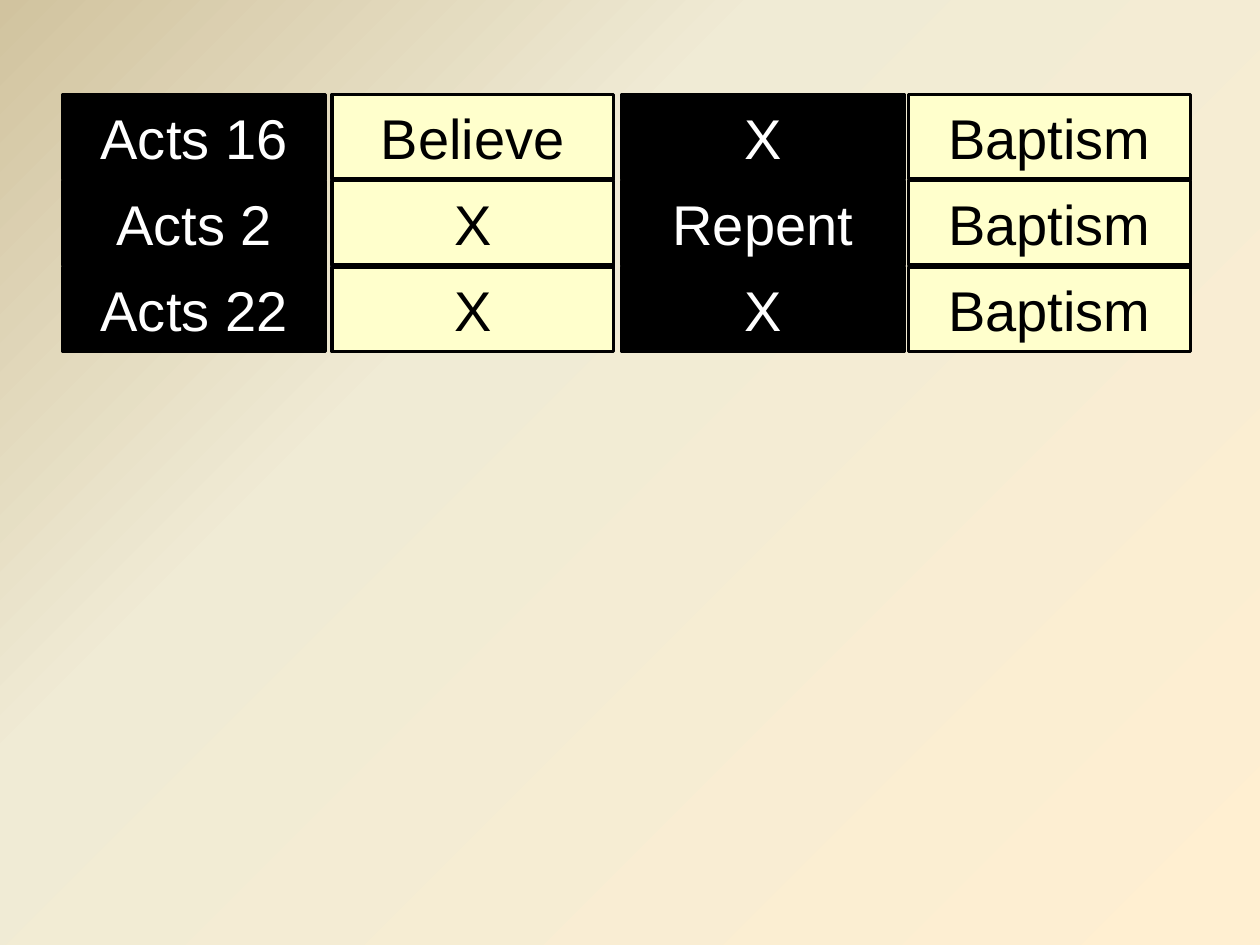
import pptx
import pptx.dml.color
import pptx.enum.shapes
import pptx.enum.text
import pptx.oxml.ns
import pptx.util
from lxml import etree

Pt = pptx.util.Pt
qn = pptx.oxml.ns.qn


def color(hex_code):
    return pptx.dml.color.RGBColor.from_string(hex_code)


class Board:
    FONT = "Arial"
    FONT_SIZE = 32
    BORDER = "000000"
    BORDER_WIDTH = 2

    def __init__(self, slide):
        self.slide = slide

    def background(self, stops, angle):
        """Fill with (percent, colour) stops; angle is clockwise degrees."""
        fill = self.slide.background.fill
        fill.gradient()
        fill.gradient_angle = 360 - angle
        stop_list = self.slide.element.find(".//" + qn("a:gsLst"))
        for default_stop in list(stop_list):
            stop_list.remove(default_stop)
        for percent, hex_code in stops:
            stop = etree.SubElement(stop_list, qn("a:gs"), pos=str(percent * 1000))
            etree.SubElement(stop, qn("a:srgbClr"), val=hex_code)

    def cell(self, text, left, top, width, height, fill, ink):
        box = self.slide.shapes.add_shape(
            pptx.enum.shapes.MSO_SHAPE.RECTANGLE,
            Pt(left), Pt(top), Pt(width), Pt(height))
        box.shadow.inherit = False
        box.fill.solid()
        box.fill.fore_color.rgb = color(fill)
        box.line.color.rgb = color(self.BORDER)
        box.line.width = Pt(self.BORDER_WIDTH)
        frame = box.text_frame
        frame.word_wrap = True
        frame.vertical_anchor = pptx.enum.text.MSO_ANCHOR.MIDDLE
        paragraph = frame.paragraphs[0]
        paragraph.alignment = pptx.enum.text.PP_ALIGN.CENTER
        run = paragraph.add_run()
        run.text = text
        run.font.name = self.FONT
        run.font.size = Pt(self.FONT_SIZE)
        run.font.color.rgb = color(ink)


CONVERSIONS = [
    ("Acts 16", "Believe", "X", "Baptism"),
    ("Acts 2", "X", "Repent", "Baptism"),
    ("Acts 22", "X", "X", "Baptism"),
]
DARK = ("000000", "FFFFFF")
LIGHT = ("FFFFCC", "000000")
COLUMNS = [  # left, width, (fill, ink)
    (36, 150, DARK),
    (189.7, 161, LIGHT),
    (355.5, 161, DARK),
    (519.3, 161, LIGHT),
]
TOP = 54
ROW_HEIGHT = 48.3
ROW_STEP = 49.3


def main():
    deck = pptx.Presentation()
    deck.slide_width, deck.slide_height = Pt(720), Pt(540)
    board = Board(deck.slides.add_slide(deck.slide_layouts[6]))
    board.background([(0, "D1C39F"), (35, "F0EBD5"), (100, "FFEFD1")], 45)
    for row, conversion in enumerate(CONVERSIONS):
        for text, (left, width, (fill, ink)) in zip(conversion, COLUMNS):
            board.cell(text, left, TOP + row * ROW_STEP, width, ROW_HEIGHT, fill, ink)
    deck.save("out.pptx")


if __name__ == "__main__":
    main()
